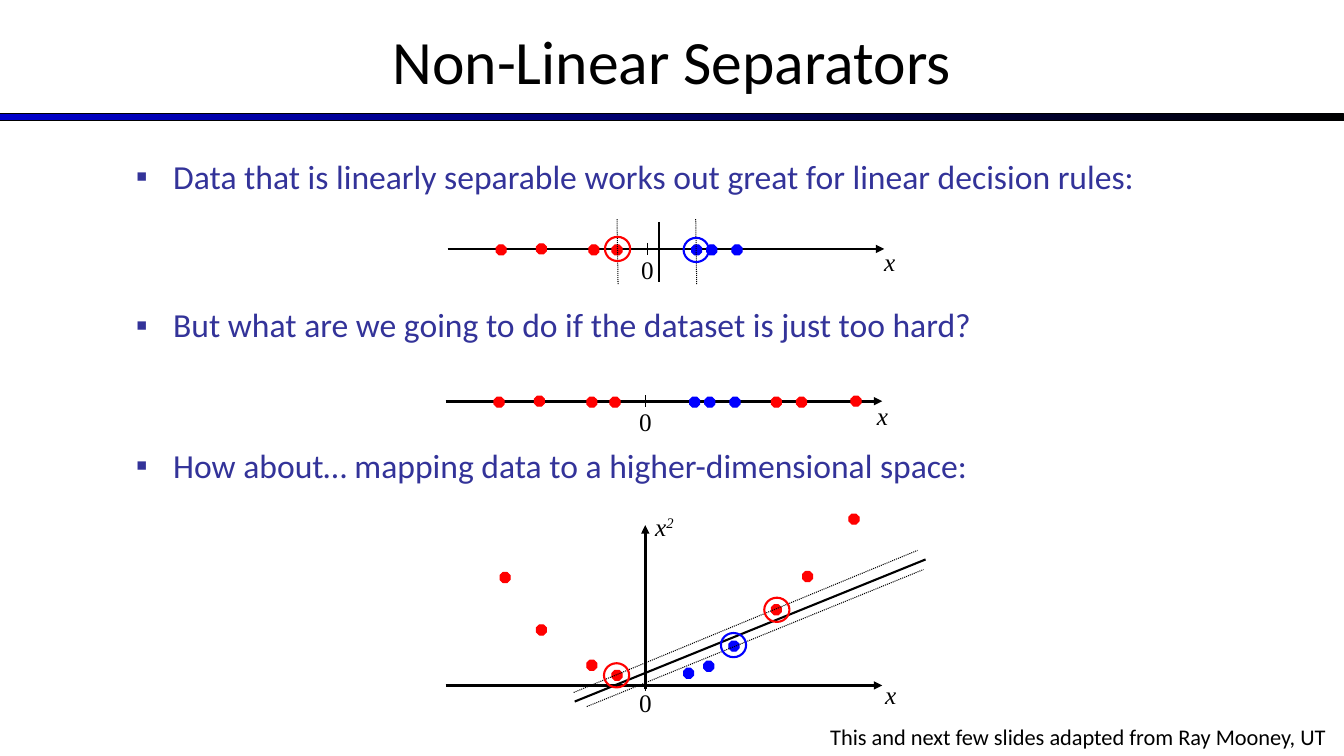
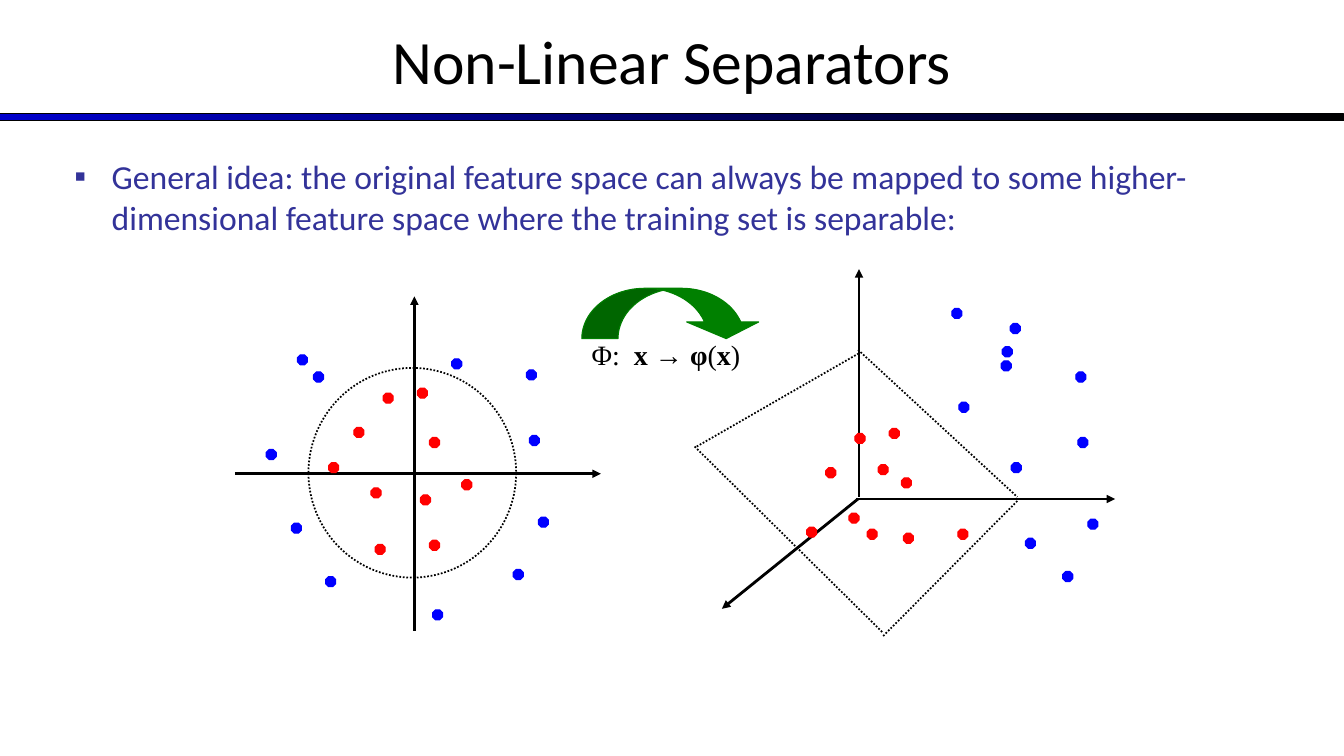
from dataclasses import dataclass

import lxml.etree
import pptx
import pptx.dml.color
import pptx.enum.dml
import pptx.enum.shapes
import pptx.enum.text
import pptx.oxml.ns
import pptx.util

# Shared look
EMU_PER_PX = 9144  # 100 px to the inch
SLIDE_WIDTH, SLIDE_HEIGHT = 1333, 750
BLACK, RED, BLUE = "000000", "FF0000", "0000FF"
BAND_BLUE, BODY_BLUE, GREEN = "0000CC", "333399", "008000"
SANS, SERIF = "Calibri", "Times New Roman"
TITLE = "Non-Linear Separators"
DOT_SIZE, RING_SIZE = 10, 25
SHAPES = pptx.enum.shapes.MSO_SHAPE
ALIGN = pptx.enum.text.PP_ALIGN
DOTTED = pptx.enum.dml.MSO_LINE.ROUND_DOT

Point = tuple[int, int]


@dataclass(frozen=True)
class Box:
    left: int
    top: int
    width: int
    height: int


@dataclass(frozen=True)
class Line:
    start: Point
    end: Point
    weight: float = 2
    arrow: bool = False
    dotted: bool = False


@dataclass(frozen=True)
class Run:
    text: str
    bold: bool = False
    italic: bool = False
    baseline: int = 0
    spacing: int = 0


@dataclass(frozen=True)
class Bullet:
    text: str
    space_before: float = 0


@dataclass(frozen=True)
class NumberLine:
    left: int
    top: int
    zero_top: int
    name_left: int
    name_top: int


# Slide 1 data
BULLETS = (
    Bullet("Data that is linearly separable works out great for linear decision rules:"),
    Bullet("But what are we going to do if the dataset is just too hard?", 77),
    Bullet("How about… mapping data to a higher-dimensional space:", 71.5),
)
EASY = NumberLine(444, 247, 247, 867, 239)
HARD = NumberLine(442, 398, 398, 860, 392)
MAPPED = NumberLine(442, 680, 677, 868, 669)
# Dot offsets from the left end of a number line
NEAR_REDS = ((48, -4), (88, -5), (140, -4), (163, -4))
NEAR_BLUES = ((257, -4), (282, -4), (242, -4))
FAR_REDS = ((323, -4), (348, -4), (402, -5))
MAPPED_REDS = ((496, 568), (532, 620), (582, 655), (607, 665),
               (765, 600), (796, 567), (842, 510))
MAPPED_BLUES = ((698, 656), (723, 636), (678, 663))
EASY_SEPARATOR = (
    Line((654, 220), (654, 280), 1.5),
    Line((691, 282), (690, 217), 0.75, dotted=True),
    Line((613, 282), (612, 217), 0.75, dotted=True),
)
MAPPED_SEPARATOR = (
    Line((640, 684), (640, 521), arrow=True),
    Line((570, 696), (918, 555), 1.5),
    Line((569, 687), (910, 546), 0.75, dotted=True),
    Line((582, 701), (916, 565), 0.75, dotted=True),
)
RINGS = ((RED, (600, 235)), (BLUE, (678, 236)),
         (RED, (758, 593)), (BLUE, (715, 628)), (RED, (599, 658)))

# Slide 2 data
IDEA = Bullet("General idea: the original feature space can always be mapped to some "
              "higher-dimensional feature space where the training set is separable:")
PLANE_REDS = ((414, 385), (351, 424), (368, 484), (426, 536), (380, 390),
              (326, 459), (372, 540), (426, 434), (458, 476), (417, 491))
PLANE_BLUES = ((525, 432), (509, 565), (264, 446), (429, 605), (534, 513), (323, 572),
               (289, 519), (295, 352), (448, 356), (311, 369), (522, 367))
SPACE_REDS = ((882, 425), (819, 464), (860, 525), (950, 525), (848, 430),
              (871, 461), (896, 529), (894, 474), (842, 509), (800, 523))
SPACE_BLUES = ((1069, 434), (1054, 567), (1002, 321), (1003, 459), (1079, 515),
               (951, 399), (1017, 534), (994, 344), (993, 358), (944, 306), (1067, 369))
AXES = (
    Line((411, 626), (411, 294), arrow=True),
    Line((233, 470), (596, 470), arrow=True),
    Line((852, 493), (852, 267), arrow=True),
    Line((849, 495), (1106, 495), arrow=True),
    Line((851, 495), (716, 604), arrow=True),
)
PLANE_EDGES = (
    Line((851, 347), (1009, 493), 1.25, dotted=True),
    Line((876, 631), (1009, 497), 1.25, dotted=True),
    Line((691, 443), (851, 351), 1.25, dotted=True),
    Line((689, 443), (876, 628), 1.25, dotted=True),
)
MAPPING = (Run("Φ:"), Run(" ", spacing=500), Run("x → φ", bold=True),
           Run("("), Run("x", bold=True), Run(")"))


def px(length: int) -> int:
    return pptx.util.Emu(length * EMU_PER_PX)


def rgb(color: str) -> pptx.dml.color.RGBColor:
    return pptx.dml.color.RGBColor.from_string(color)


def corners(box: Box) -> tuple[int, ...]:
    return px(box.left), px(box.top), px(box.width), px(box.height)


def add_child(parent, tag: str, **attributes: str):
    child = lxml.etree.SubElement(parent, pptx.oxml.ns.qn(tag))
    for name, value in attributes.items():
        child.set(name, value)
    return child


def set_font(paragraph, name: str, size: int, color: str) -> None:
    paragraph.font.name = name
    paragraph.font.size = pptx.util.Pt(size)
    paragraph.font.color.rgb = rgb(color)


def add_outline(slide, kind, box: Box, line_color: str, weight: float = 0.75,
                fill: str | None = None):
    shape = slide.shapes.add_shape(kind, *corners(box))
    shape.shadow.inherit = False
    if fill is None:
        shape.fill.background()
    else:
        shape.fill.solid()
        shape.fill.fore_color.rgb = rgb(fill)
    shape.line.color.rgb = rgb(line_color)
    shape.line.width = pptx.util.Pt(weight)
    return shape


def add_dots(slide, points, color: str, left: int = 0, top: int = 0) -> None:
    for x, y in points:
        box = Box(left + x, top + y, DOT_SIZE, DOT_SIZE)
        add_outline(slide, SHAPES.OCTAGON, box, color, fill=color)


def add_lines(slide, lines: tuple[Line, ...]) -> None:
    for line in lines:
        connector = slide.shapes.add_connector(
            pptx.enum.shapes.MSO_CONNECTOR.STRAIGHT,
            *(px(value) for value in line.start + line.end))
        connector.line.color.rgb = rgb(BLACK)
        connector.line.width = pptx.util.Pt(line.weight)
        if line.dotted:
            connector.line.dash_style = DOTTED
        if line.arrow:
            add_child(connector.line._get_or_add_ln(), "a:tailEnd", type="triangle")
        add_child(connector._element.spPr, "a:effectLst")


def add_label(slide, box: Box, runs: tuple[Run, ...], font: str = SERIF, size: int = 18,
              align=ALIGN.LEFT) -> None:
    frame = slide.shapes.add_textbox(*corners(box)).text_frame
    frame.word_wrap = True
    frame.auto_size = pptx.enum.text.MSO_AUTO_SIZE.SHAPE_TO_FIT_TEXT
    paragraph = frame.paragraphs[0]
    paragraph.alignment = align
    set_font(paragraph, font, size, BLACK)
    for part in runs:
        run = paragraph.add_run()
        run.text = part.text
        run.font.bold = part.bold
        run.font.italic = part.italic
        properties = run._r.get_or_add_rPr()
        if part.baseline:
            properties.set("baseline", str(part.baseline))
        if part.spacing:
            properties.set("spc", str(part.spacing))


def add_bullets(slide, box: Box, bullets: tuple[Bullet, ...]) -> None:
    frame = slide.shapes.add_textbox(*corners(box)).text_frame
    frame.word_wrap = True
    for index, bullet in enumerate(bullets):
        paragraph = frame.add_paragraph() if index else frame.paragraphs[0]
        paragraph.text = bullet.text
        paragraph.space_before = pptx.util.Pt(bullet.space_before)
        properties = paragraph._p.get_or_add_pPr()
        properties.set("marL", str(px(37)))
        properties.set("indent", str(-px(37)))
        add_child(add_child(properties, "a:buClr"), "a:srgbClr", val=BODY_BLUE)
        add_child(properties, "a:buFont", typeface="Arial")
        add_child(properties, "a:buChar", char="▪")
        set_font(paragraph, SANS, 24, BODY_BLUE)


def add_titled_slide(presentation):
    slide = presentation.slides.add_slide(presentation.slide_layouts[5])
    # Gradient band
    band = add_outline(slide, SHAPES.RECTANGLE, Box(0, 113, SLIDE_WIDTH, 7), BLACK)
    band.fill.gradient()
    band.fill.gradient_angle = 0
    for stop, color in zip(band.fill.gradient_stops, (BAND_BLUE, BLACK)):
        stop.color.rgb = rgb(color)
    # Title
    title = slide.shapes.title
    title.left, title.top, title.width, title.height = corners(
        Box(0, -3, SLIDE_WIDTH, 125))
    title.text_frame.text = TITLE
    title.text_frame.vertical_anchor = pptx.enum.text.MSO_ANCHOR.MIDDLE
    paragraph = title.text_frame.paragraphs[0]
    paragraph.alignment = ALIGN.CENTER
    set_font(paragraph, SANS, 44, BLACK)
    return slide


def add_number_line(slide, row: NumberLine) -> None:
    zero = row.left + 198
    add_lines(slide, (
        Line((row.left, row.top), (row.left + 433, row.top), arrow=True),
        Line((zero, row.top - 6), (zero, row.top + 6), 0.75),
    ))
    add_label(slide, Box(zero - 16, row.zero_top, 38, 40), (Run("0"),))
    add_label(slide, Box(row.name_left, row.name_top, 50, 40), (Run("x", italic=True),))


def build_one_dimension_slide(presentation) -> None:
    slide = add_titled_slide(presentation)
    add_bullets(slide, Box(125, 150, 1167, 475), BULLETS)
    for row in (EASY, HARD, MAPPED):
        add_number_line(slide, row)
    # Dots on the two plain number lines
    for row in (EASY, HARD):
        add_dots(slide, NEAR_REDS, RED, row.left, row.top)
        add_dots(slide, NEAR_BLUES, BLUE, row.left, row.top)
    add_dots(slide, FAR_REDS, RED, HARD.left, HARD.top)
    # Dots mapped to the parabola
    add_dots(slide, MAPPED_REDS, RED)
    add_dots(slide, MAPPED_BLUES, BLUE)
    add_label(slide, Box(640, 502, 50, 40),
              (Run("x", italic=True), Run("2", italic=True, baseline=30000)))
    # Separators and support vectors
    add_lines(slide, EASY_SEPARATOR + MAPPED_SEPARATOR)
    for color, (left, top) in RINGS:
        add_outline(slide, SHAPES.OVAL, Box(left, top, RING_SIZE, RING_SIZE - 1), color, 1.5)
    add_label(slide, Box(750, 713, 575, 37),
              (Run("This and next few slides adapted from Ray Mooney, UT"),),
              SANS, 16, ALIGN.RIGHT)


def build_feature_space_slide(presentation) -> None:
    slide = add_titled_slide(presentation)
    add_bullets(slide, Box(64, 150, 1244, 517), (IDEA,))
    add_lines(slide, AXES)
    # Data in both spaces
    add_dots(slide, PLANE_REDS + SPACE_REDS, RED)
    add_dots(slide, PLANE_BLUES + SPACE_BLUES, BLUE)
    # Circular and planar boundaries
    circle = add_outline(slide, SHAPES.OVAL, Box(306, 365, 206, 208), BLACK, 1.25)
    circle.line.dash_style = DOTTED
    add_lines(slide, PLANE_EDGES)
    # Mapping arrow
    arrow = add_outline(slide, SHAPES.CURVED_DOWN_ARROW, Box(577, 286, 179, 50),
                        GREEN, fill=GREEN)
    for index, value in enumerate((0.72, 1.43, 0.33)):
        arrow.adjustments[index] = value
    add_label(slide, Box(577, 330, 184, 43), MAPPING, size=20)


def main() -> None:
    presentation = pptx.Presentation()
    presentation.slide_width = px(SLIDE_WIDTH)
    presentation.slide_height = px(SLIDE_HEIGHT)
    build_one_dimension_slide(presentation)
    build_feature_space_slide(presentation)
    presentation.save("out.pptx")


if __name__ == "__main__":
    main()
